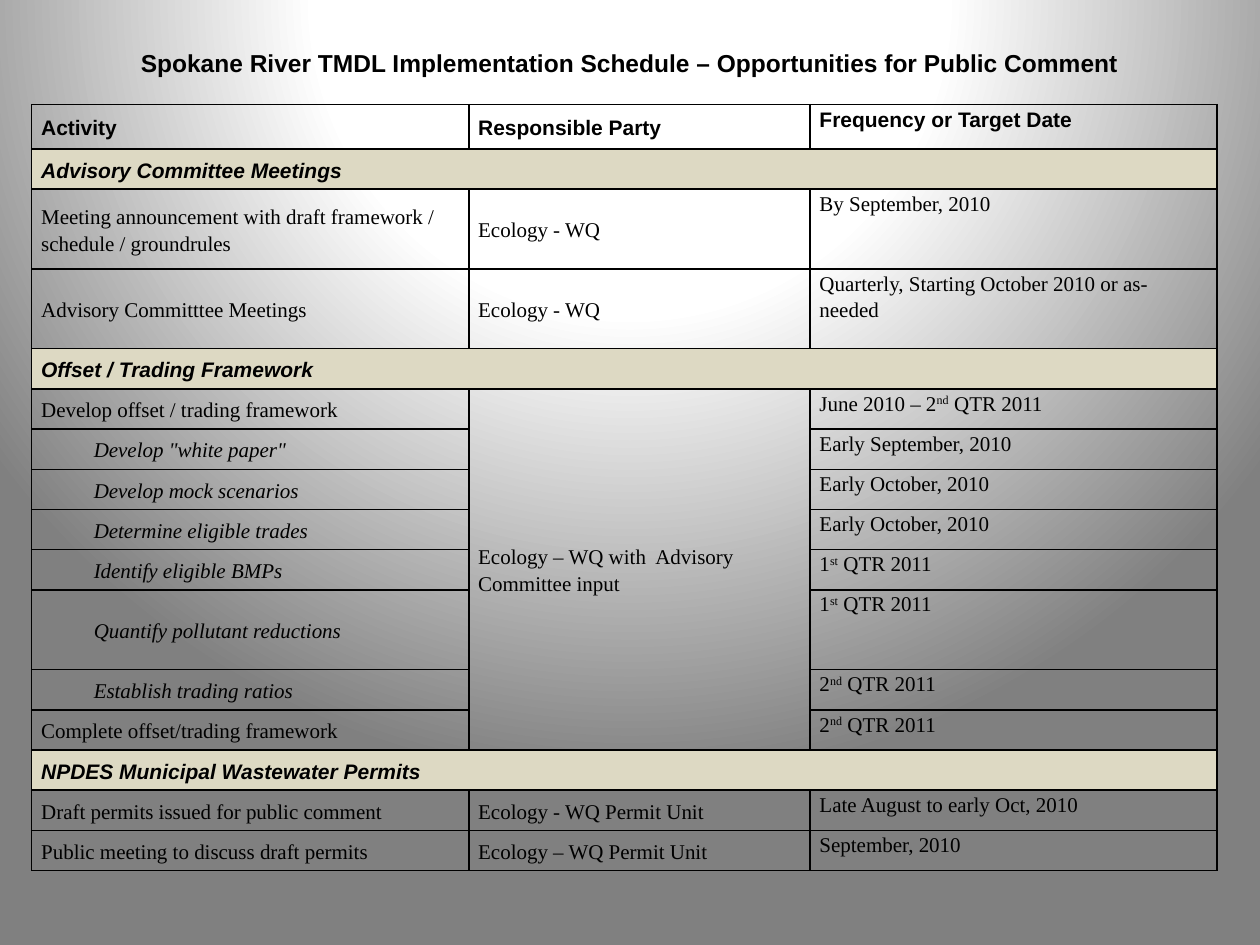
from pptx import Presentation
from pptx.dml.color import RGBColor
from pptx.enum.text import MSO_ANCHOR as Anchor, MSO_AUTO_SIZE as AutoSize, PP_ALIGN as Align
from pptx.oxml import parse_xml
from pptx.oxml.ns import nsdecls, qn
from pptx.util import Cm, Pt

BLACK = RGBColor(0x00, 0x00, 0x00)
WHITE = RGBColor(0xFF, 0xFF, 0xFF)
GREY = RGBColor(0x80, 0x80, 0x80)
BEIGE = RGBColor(0xDD, 0xD9, 0xC3)

HEADING_FONT = "Arial"
BODY_FONT = "Times New Roman"

COLUMN_WIDTHS = (8.81, 6.88, 8.2)
HEADER_HEIGHT, ROW_HEIGHT, TALL_HEIGHT = 0.89, 0.81, 1.61

TITLE = "Spokane River TMDL Implementation Schedule – Opportunities for Public Comment"
HEADERS = ("Activity", "Responsible Party", "Frequency or Target Date")
WATER_QUALITY = "Ecology - WQ"
SHARED_PARTY = "Ecology – WQ with  Advisory Committee input"

# Kind of row, then its cells; text between carets is superscript.
ROWS = [
    ("header", *HEADERS),
    ("section", "Advisory Committee Meetings"),
    ("tall", "Meeting announcement with draft framework / schedule / groundrules",
     WATER_QUALITY, "By September, 2010"),
    ("tall", "Advisory Committtee Meetings", WATER_QUALITY,
     "Quarterly, Starting October 2010 or as-needed"),
    ("section", "Offset / Trading Framework"),
    ("plain", "Develop offset / trading framework", SHARED_PARTY, "June 2010 – 2^nd^ QTR 2011"),
    ("step", 'Develop "white paper"', None, "Early September, 2010"),
    ("step", "Develop mock scenarios", None, "Early October, 2010"),
    ("step", "Determine eligible trades", None, "Early October, 2010"),
    ("step", "Identify eligible BMPs", None, "1^st^ QTR 2011"),
    ("tall step", "Quantify pollutant reductions", None, "1^st^ QTR 2011"),
    ("step", "Establish trading ratios", None, "2^nd^ QTR 2011"),
    ("plain", "Complete offset/trading framework", None, "2^nd^ QTR 2011"),
    ("section", "NPDES Municipal Wastewater Permits"),
    ("plain", "Draft permits issued for public comment", "Ecology - WQ Permit Unit",
     "Late August to early Oct, 2010"),
    ("plain", "Public meeting to discuss draft permits", "Ecology – WQ Permit Unit",
     "September, 2010"),
]
SHARED_FIRST, SHARED_LAST = 5, 12


def paint_background(page):
    """Radial gradient centred above the top edge."""
    page.background.fill.gradient()
    old = page.background._cSld.find(".//" + qn("a:gradFill"))
    stops = "".join(
        f'<a:gs pos="{percent * 1000}"><a:srgbClr val="{color}"/></a:gs>'
        for percent, color in ((0, WHITE), (40, WHITE), (100, GREY)))
    old.getparent().replace(old, parse_xml(
        f'<a:gradFill rotWithShape="1" {nsdecls("a")}><a:gsLst>{stops}</a:gsLst>'
        '<a:path path="circle"><a:fillToRect l="50000" t="-80000" r="50000" b="180000"/>'
        '</a:path></a:gradFill>'))


def style_run(span, font, size, bold=False, italic=False):
    span.font.name = font
    span.font.size = Pt(size)
    span.font.bold = bold
    span.font.italic = italic
    span.font.color.rgb = BLACK


def add_title(page, left, top, width, height):
    frame = page.shapes.add_textbox(left, top, width, height).text_frame
    frame.text = TITLE
    frame.word_wrap = False
    frame.auto_size = AutoSize.SHAPE_TO_FIT_TEXT
    frame.vertical_anchor = Anchor.MIDDLE
    para = frame.paragraphs[0]
    para.alignment = Align.CENTER
    style_run(para.runs[0], HEADING_FONT, 14, bold=True)


def format_cell(cell, fill=None):
    """Set insets, fill and a thin black border on all four sides."""
    cell.margin_left = cell.margin_right = Cm(0.19)
    cell.margin_top = cell.margin_bottom = 0
    properties = cell._tc.get_or_add_tcPr()
    for side in ("lnL", "lnR", "lnT", "lnB"):
        properties.append(parse_xml(
            f'<a:{side} w="{Pt(1)}" {nsdecls("a")}><a:solidFill>'
            f'<a:srgbClr val="{BLACK}"/></a:solidFill></a:{side}>'))
    if fill is None:
        cell.fill.background()
    else:
        cell.fill.solid()
        cell.fill.fore_color.rgb = fill


def write_cell(cell, text, kind, column):
    heading = kind in ("header", "section")
    step = "step" in kind and column == 0
    cell.vertical_anchor = Anchor.TOP if column == 2 else Anchor.MIDDLE
    para = cell.text_frame.paragraphs[0]
    para.line_spacing = 1.15
    if step:
        para._p.get_or_add_pPr().set("marL", str(Cm(1.06)))
    for part, words in enumerate(text.split("^")):
        span = para.add_run()
        span.text = words
        style_run(span, HEADING_FONT if heading else BODY_FONT, 12,
                  bold=heading, italic=step or kind == "section")
        if part % 2:
            span.font._element.set("baseline", "30000")


def add_schedule(page, left, top):
    heights = [HEADER_HEIGHT if kind == "header" else TALL_HEIGHT if "tall" in kind
               else ROW_HEIGHT for kind, *_ in ROWS]
    table = page.shapes.add_table(len(ROWS), len(COLUMN_WIDTHS), left, top,
                                  Cm(sum(COLUMN_WIDTHS)), Cm(sum(heights))).table
    table.first_row = table.horz_banding = False
    for column, width in zip(table.columns, COLUMN_WIDTHS):
        column.width = Cm(width)
    for index, (kind, *texts) in enumerate(ROWS):
        table.rows[index].height = Cm(heights[index])
        cells = table.rows[index].cells
        for cell in cells:
            format_cell(cell, BEIGE if kind == "section" else None)
        for column, text in enumerate(texts):
            if text:
                write_cell(table.cell(index, column), text, kind, column)
        if kind == "section":
            table.cell(index, 0).merge(table.cell(index, 2))
    table.cell(SHARED_FIRST, 1).merge(table.cell(SHARED_LAST, 1))


def main():
    deck = Presentation()
    deck.slide_width, deck.slide_height = Cm(25.4), Cm(19.05)
    page = deck.slides.add_slide(deck.slide_layouts[6])
    paint_background(page)
    add_schedule(page, Cm(0.64), Cm(2.11))
    add_title(page, Cm(2.54), Cm(0.84), Cm(20.32), Cm(0.86))
    deck.save("out.pptx")


if __name__ == "__main__":
    main()
